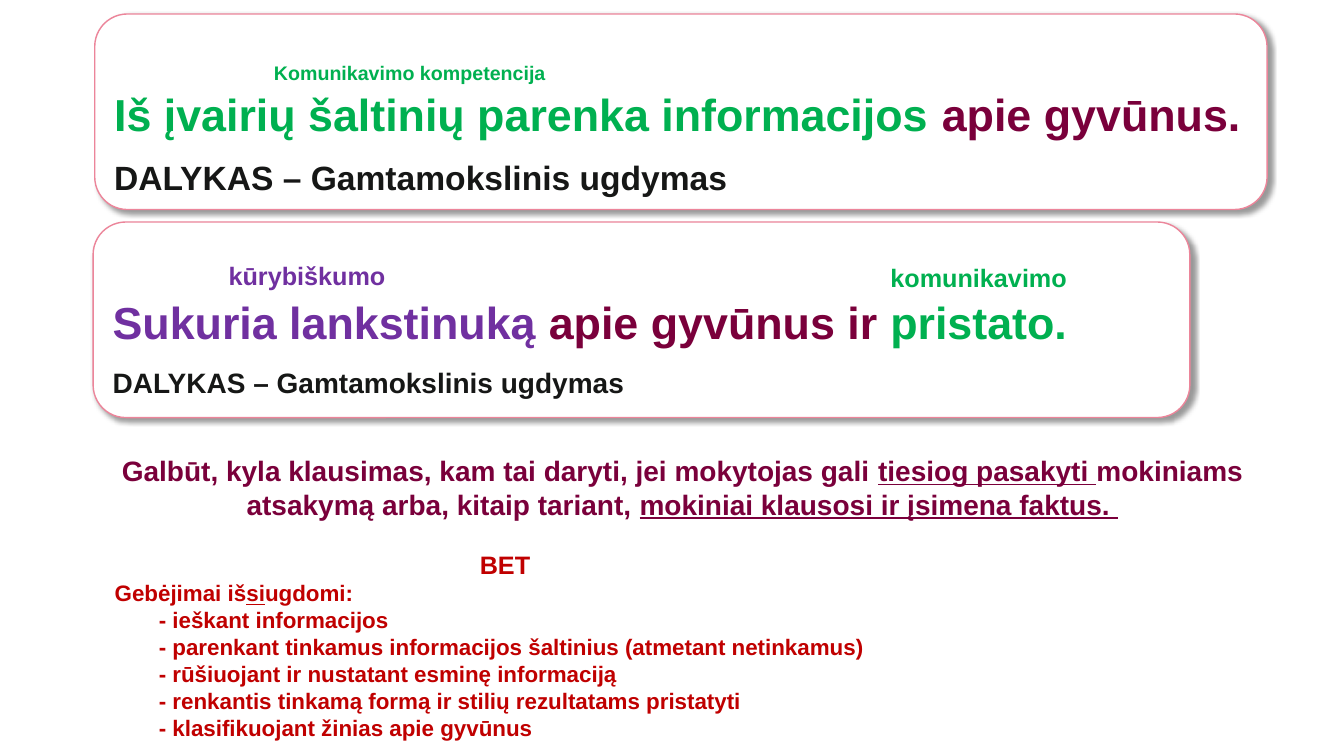
from lxml import etree
from pptx import Presentation
from pptx.dml.color import RGBColor
from pptx.enum.shapes import MSO_SHAPE
from pptx.enum.text import MSO_ANCHOR, PP_ALIGN
from pptx.oxml.ns import qn
from pptx.util import Pt

ROUNDED = MSO_SHAPE.ROUNDED_RECTANGLE
TOP = MSO_ANCHOR.TOP
LEFT, CENTER = PP_ALIGN.LEFT, PP_ALIGN.CENTER

COLORS = {
    "white": "FFFFFF",
    "pink": "EC859A",
    "shadow": "000000",
    "green": "00B050",
    "plum": "7A003B",
    "purple": "7030A0",
    "ink": "161716",
    "red": "C00000",
}
SUBJECT = "DALYKAS – Gamtamokslinis ugdymas"
ABILITIES = [
    "- ieškant informacijos",
    "- parenkant tinkamus informacijos šaltinius (atmetant netinkamus)",
    "- rūšiuojant ir nustatant esminę informaciją",
    "- renkantis tinkamą formą ir stilių rezultatams pristatyti",
    "- klasifikuojant žinias apie gyvūnus",
]


class SlideBuilder:
    font_name = "Arial"

    def __init__(self, slide):
        self.slide = slide

    def color(self, name):
        return RGBColor.from_string(COLORS[name])

    def fill_paragraph(self, paragraph, runs, size, color=None, align=LEFT):
        paragraph.alignment = align
        font = paragraph.font
        font.name, font.size, font.bold = self.font_name, Pt(size), True
        if color:
            font.color.rgb = self.color(color)
        for text, run_color, underline in runs:
            run = paragraph.add_run()
            run.text = text
            if run_color:
                run.font.color.rgb = self.color(run_color)
            if underline:
                run.font.underline = True

    def add_shadow(self, shape):
        shape.shadow.inherit = False
        effects = shape._element.spPr.find(qn("a:effectLst"))
        shadow = etree.SubElement(
            effects, qn("a:outerShdw"), blurRad=str(Pt(4)), dist=str(Pt(3)),
            dir="2700000", algn="tl", rotWithShape="0")
        color = etree.SubElement(shadow, qn("a:srgbClr"), val=COLORS["shadow"])
        etree.SubElement(color, qn("a:alpha"), val="40000")

    def card(self, left, top, width, height, headline, subject_size):
        shape = self.slide.shapes.add_shape(
            ROUNDED, Pt(left), Pt(top), Pt(width), Pt(height))
        shape.fill.solid()
        shape.fill.fore_color.rgb = self.color("white")
        shape.line.color.rgb = self.color("pink")
        shape.line.width = Pt(1)
        self.add_shadow(shape)
        frame = shape.text_frame
        frame.word_wrap = True
        frame.vertical_anchor = TOP
        frame.margin_top = Pt(45)
        self.fill_paragraph(frame.paragraphs[0], headline, 32)
        subject = frame.add_paragraph()
        subject.space_before = Pt(12)
        self.fill_paragraph(subject, [(SUBJECT, None, False)], subject_size, "ink")

    def text_box(self, left, top, width, height):
        shape = self.slide.shapes.add_textbox(
            Pt(left), Pt(top), Pt(width), Pt(height))
        shape.text_frame.word_wrap = True
        return shape.text_frame

    def label(self, left, top, width, height, runs, size, color, align=CENTER):
        frame = self.text_box(left, top, width, height)
        self.fill_paragraph(frame.paragraphs[0], runs, size, color, align)

    def ability_list(self, left, top, width, height):
        frame = self.text_box(left, top, width, height)
        intro = [("Gebėjimai iš", None, False), ("si", None, True), ("ugdomi:", None, False)]
        rows = [([("BET", None, False)], 18, CENTER, 0), (intro, 16, LEFT, 0)]
        rows += [([(text, None, False)], 16, LEFT, 1) for text in ABILITIES]
        for index, (runs, size, align, level) in enumerate(rows):
            paragraph = frame.add_paragraph() if index else frame.paragraphs[0]
            paragraph.level = level
            properties = paragraph._p.get_or_add_pPr()
            properties.set("marL", str(Pt(36 + 31.5 * level)))
            properties.set("indent", str(Pt(-36)))
            self.fill_paragraph(paragraph, runs, size, "red", align)


def main():
    presentation = Presentation()
    presentation.slide_width, presentation.slide_height = Pt(960), Pt(540)
    builder = SlideBuilder(presentation.slides.add_slide(presentation.slide_layouts[6]))

    builder.card(67.7, 10, 837.4, 139.7, [
        ("Iš įvairių šaltinių parenka informacijos ", "green", False),
        ("apie gyvūnus.", "plum", False),
    ], 24)
    builder.label(188.6, 40.3, 228.2, 24.5,
                  [("Komunikavimo kompetencija", None, False)], 14, "green", LEFT)

    builder.card(66.5, 158.6, 783.4, 139.7, [
        ("Sukuria lankstinuką ", "purple", False),
        ("apie gyvūnus ir ", "plum", False),
        ("pristato.", "green", False),
    ], 20)
    builder.label(146.2, 182.2, 146.2, 28.8, [("kūrybiškumo", None, False)], 18, "purple")
    builder.label(616.3, 183.6, 165.6, 28.8, [("komunikavimo", None, False)], 18, "green")

    builder.label(49.7, 320.4, 875.5, 55.4, [
        ("Galbūt, kyla klausimas, kam tai daryti, jei mokytojas gali ", None, False),
        ("tiesiog pasakyti ", None, True),
        ("mokiniams atsakymą arba, kitaip tariant, ", None, False),
        ("mokiniai klausosi ir įsimena faktus. ", None, True),
    ], 20, "plum")
    builder.ability_list(74.9, 388.8, 571.7, 140.4)
    presentation.save("out.pptx")


if __name__ == "__main__":
    main()
